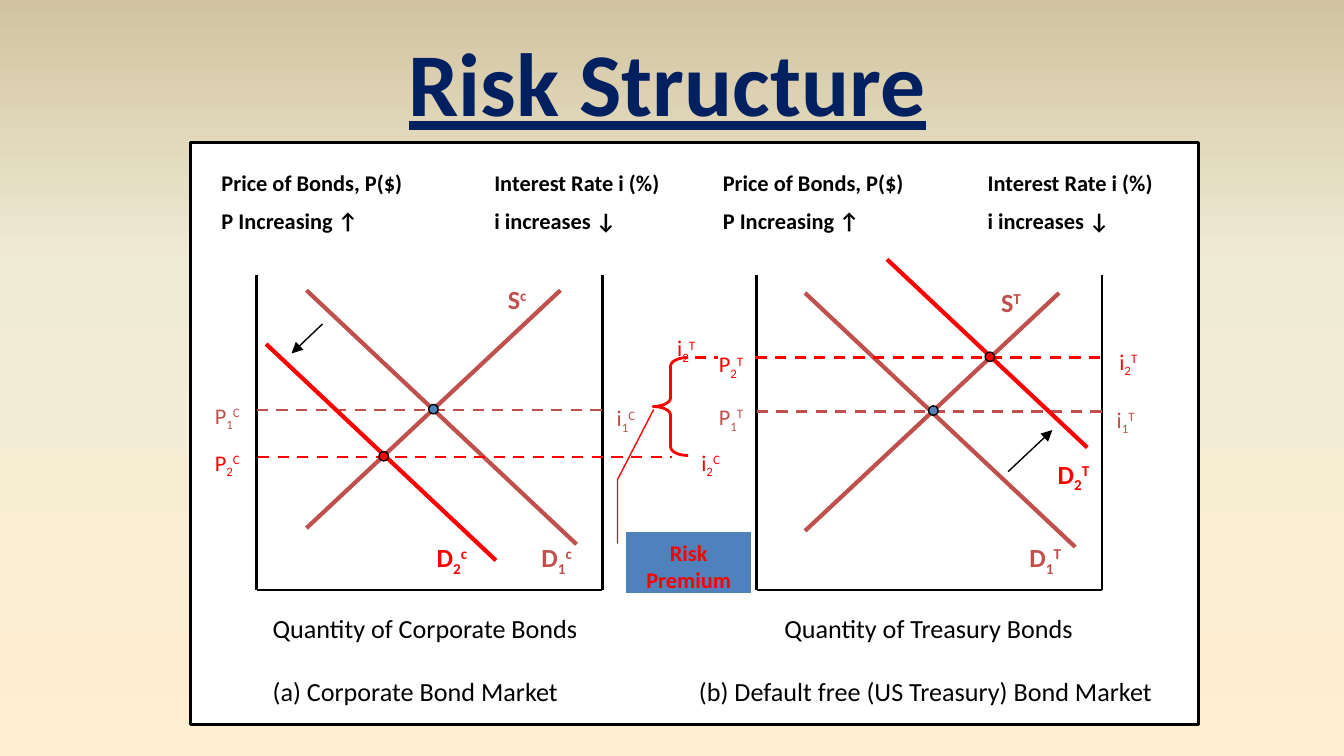
import copy

import pptx
import pptx.dml.color
import pptx.enum.dml
import pptx.enum.shapes
import pptx.enum.text
import pptx.oxml
import pptx.oxml.ns
import pptx.util

Inches = pptx.util.Inches
Pt = pptx.util.Pt
RGBColor = pptx.dml.color.RGBColor
Shape = pptx.enum.shapes.MSO_SHAPE
Align = pptx.enum.text.PP_ALIGN
qn = pptx.oxml.ns.qn

BLACK = RGBColor(0x00, 0x00, 0x00)
WHITE = RGBColor(0xFF, 0xFF, 0xFF)
RED = RGBColor(0xFF, 0x00, 0x00)
BRICK = RGBColor(0xC0, 0x50, 0x4D)
BLUE = RGBColor(0x4F, 0x81, 0xBD)
NAVY = RGBColor(0x00, 0x20, 0x60)
BACKGROUND_STOPS = [
    (0, RGBColor(0xFF, 0xEF, 0xD1)),
    (0.65, RGBColor(0xF0, 0xEB, 0xD5)),
    (1, RGBColor(0xD1, 0xC3, 0x9F)),
]

FONT = "Calibri"
PANEL_SHIFT = 3.72
CURVE_SHIFT = 3.71
CURVE_DROP = 0.02
DOT = 0.07

CURVE_LABELS = [
    (3.93, 3.98, "D", "1", "c", BRICK),
    (3.68, 2.06, "S", "", "c", BRICK),
    (3.15, 3.98, "D", "2", "c", RED),
    (7.56, 3.98, "D", "1", "T", BRICK),
    (7.35, 2.08, "S", "", "T", BRICK),
    (7.77, 3.36, "D", "2", "T", RED),
]
LEVEL_LABELS = [
    (1.5, 2.94, "P", "1", "C", BRICK),
    (4.49, 2.96, "i", "1", "C", BRICK),
    (1.5, 3.29, "P", "2", "C", RED),
    (5.12, 3.29, "i", "2", "C", RED),
    (5.25, 2.95, "P", "1", "T", BRICK),
    (8.21, 2.97, "i", "1", "T", BRICK),
    (5.25, 2.56, "P", "2", "T", RED),
    (8.23, 2.54, "i", "2", "T", RED),
    (4.94, 2.44, "i", "2", "T", RED),
]
PRICE = ["Price of Bonds, P($)", "P Increasing ↑"]
INTEREST = ["Interest Rate i (%)", "i increases ↓"]
HEADINGS = [
    (1.55, 1.7, PRICE),
    (3.58, 1.43, INTEREST),
    (5.28, 1.55, PRICE),
    (7.25, 1.5, INTEREST),
]


def paint_background(page):
    fill = page.background.fill
    fill.gradient()
    fill.gradient_angle = 90
    stop_list = next(page.element.iter(qn("a:gsLst")))
    stop_list.append(copy.deepcopy(stop_list[-1]))
    for stop, (position, color) in zip(fill.gradient_stops, BACKGROUND_STOPS):
        stop.position = position
        stop.color.rgb = color


def add_span(para, text, size, color, bold=False, baseline=0):
    span = para.add_run()
    span.text = text
    span.font.name = FONT
    span.font.size = Pt(size)
    span.font.bold = bold
    span.font.color.rgb = color
    if baseline:
        span.font._element.set("baseline", str(baseline * 1000))
    return span


def add_box(page, x, y, width, height):
    box = page.shapes.add_textbox(Inches(x), Inches(y), Inches(width), Inches(height))
    box.text_frame.word_wrap = True
    return box.text_frame


def add_lines(page, x, y, width, height, lines, size, gap, bold=False, align=Align.LEFT):
    frame = add_box(page, x, y, width, height)
    for index, text in enumerate(lines):
        para = frame.add_paragraph() if index else frame.paragraphs[0]
        para.alignment = align
        para.space_before = Pt(gap if index else 0)
        add_span(para, text, size, BLACK, bold)


def add_symbol(page, x, y, letter, low, high, color, size, bold):
    para = add_box(page, x, y, 0.55, 0.3).paragraphs[0]
    for text, baseline in ((letter, 0), (low, -25), (high, 30)):
        if text:
            add_span(para, text, size, color, bold, baseline)


def add_line(page, start, end, color, weight, dashed=False, arrow=False):
    points = [Inches(value) for value in (*start, *end)]
    line = page.shapes.add_connector(pptx.enum.shapes.MSO_CONNECTOR.STRAIGHT, *points)
    line.line.color.rgb = color
    line.line.width = Pt(weight)
    if dashed:
        line.line.dash_style = pptx.enum.dml.MSO_LINE.DASH
    properties = line._element.spPr
    if arrow:
        head = pptx.oxml.parse_xml(
            f'<a:tailEnd {pptx.oxml.ns.nsdecls("a")} type="triangle"/>'
        )
        properties.find(qn("a:ln")).append(head)
    properties.append(pptx.oxml.parse_xml(f'<a:effectLst {pptx.oxml.ns.nsdecls("a")}/>'))


def add_figure(page, kind, x, y, width, height, fill, color, weight, adjustments=()):
    figure = page.shapes.add_shape(
        kind, Inches(x), Inches(y), Inches(width), Inches(height)
    )
    figure.shadow.inherit = False
    if fill is None:
        figure.fill.background()
    else:
        figure.fill.solid()
        figure.fill.fore_color.rgb = fill
    figure.line.color.rgb = color
    figure.line.width = Pt(weight)
    for index, value in enumerate(adjustments):
        figure.adjustments[index] = value
    return figure


def add_dot(page, x, y, color):
    add_figure(page, Shape.OVAL, x, y, DOT, DOT, color, BLACK, 0.75)


def add_market(page, shift, curve_shift, drop):
    left, right, top, bottom = 1.91 + shift, 4.48 + shift, 2.05, 4.39
    start, level = 2.28 + curve_shift, 3.05 + drop / 2
    add_line(page, (left, top), (left, bottom), BLACK, 1.5)
    add_line(page, (left, bottom), (right, bottom), BLACK, 1.5)
    add_line(page, (right, top), (right, bottom), BLACK, 1.5)
    add_line(page, (start, 2.16 + drop), (start + 2.01, 4.05 + drop), BRICK, 2.25)
    add_line(page, (start, 3.93 + drop), (start + 1.89, 2.16 + drop), BRICK, 2.25)
    add_line(page, (left, level), (right, level), BRICK, 1.5, dashed=True)
    add_dot(page, 3.19 + shift, level - 0.04, BLUE)


def add_shifts(page):
    add_line(page, (1.98, 2.56), (3.69, 4.17), RED, 2.25)
    add_line(page, (6.6, 1.93), (8.09, 3.33), RED, 2.25)
    add_line(page, (2.4, 2.41), (2.17, 2.63), BLACK, 0.75, arrow=True)
    add_line(page, (7.5, 3.51), (7.83, 3.2), BLACK, 0.75, arrow=True)
    for left, right, level in ((5.62, 8.22, 2.66), (5.17, 5.34, 2.66), (1.92, 5, 3.4)):
        add_line(page, (left, level), (right, level), RED, 1.5, dashed=True)
    add_dot(page, 7.33, 2.62, RED)
    add_dot(page, 2.82, 3.36, RED)


def add_risk_premium(page):
    bends = (0.19, -0.07, 0.19, -0.07, -0.87, -0.07, -2.03, 0.22)
    callout = add_figure(
        page, Shape.LINE_CALLOUT_3_NO_BORDER, 4.66, 3.96, 0.93, 0.45, BLUE, RED, 0.75, bends
    )
    frame = callout.text_frame
    frame.word_wrap = True
    frame.vertical_anchor = pptx.enum.text.MSO_ANCHOR.TOP
    para = frame.paragraphs[0]
    para.alignment = Align.CENTER
    add_span(para, "Risk Premium", 12, RED, bold=True)
    add_figure(page, Shape.LEFT_BRACE, 4.86, 2.66, 0.26, 0.73, None, RED, 1.5, (0.25, 0.5))


def fill_title(page):
    title = page.shapes.title
    title.left, title.top = Inches(2.92), Inches(0.15)
    title.width, title.height = Inches(4.09), Inches(0.91)
    frame = title.text_frame
    frame.word_wrap = False
    frame.auto_size = pptx.enum.text.MSO_AUTO_SIZE.NONE
    frame.vertical_anchor = pptx.enum.text.MSO_ANCHOR.TOP
    para = frame.paragraphs[0]
    para.alignment = Align.CENTER
    para.space_before = Pt(0)
    add_span(para, "Risk Structure", 48, NAVY, bold=True).font.underline = True


def main():
    deck = pptx.Presentation()
    deck.slide_width = Inches(10)
    deck.slide_height = deck.slide_width * 9 // 16
    page = deck.slides.add_slide(deck.slide_layouts[5])
    paint_background(page)
    fill_title(page)
    add_figure(page, Shape.RECTANGLE, 1.42, 1.06, 7.5, 4.33, WHITE, BLACK, 1.75)
    add_market(page, 0, 0, 0)
    add_market(page, PANEL_SHIFT, CURVE_SHIFT, CURVE_DROP)
    add_shifts(page)
    add_risk_premium(page)
    for x, width, lines in HEADINGS:
        add_lines(page, x, 1.21, width, 0.61, lines, 12, 6, bold=True)
    corporate = ["Quantity of Corporate Bonds", "(a) Corporate Bond Market"]
    treasury = ["Quantity of Treasury Bonds", "(b) Default free (US Treasury) Bond Market "]
    add_lines(page, 1.93, 4.51, 2.82, 0.81, corporate, 14, 17)
    add_lines(page, 4.99, 4.51, 3.84, 0.81, treasury, 14, 17, align=Align.CENTER)
    for label in CURVE_LABELS:
        add_symbol(page, *label, size=14, bold=True)
    for label in LEVEL_LABELS:
        add_symbol(page, *label, size=12, bold=False)
    deck.save("out.pptx")


if __name__ == "__main__":
    main()
